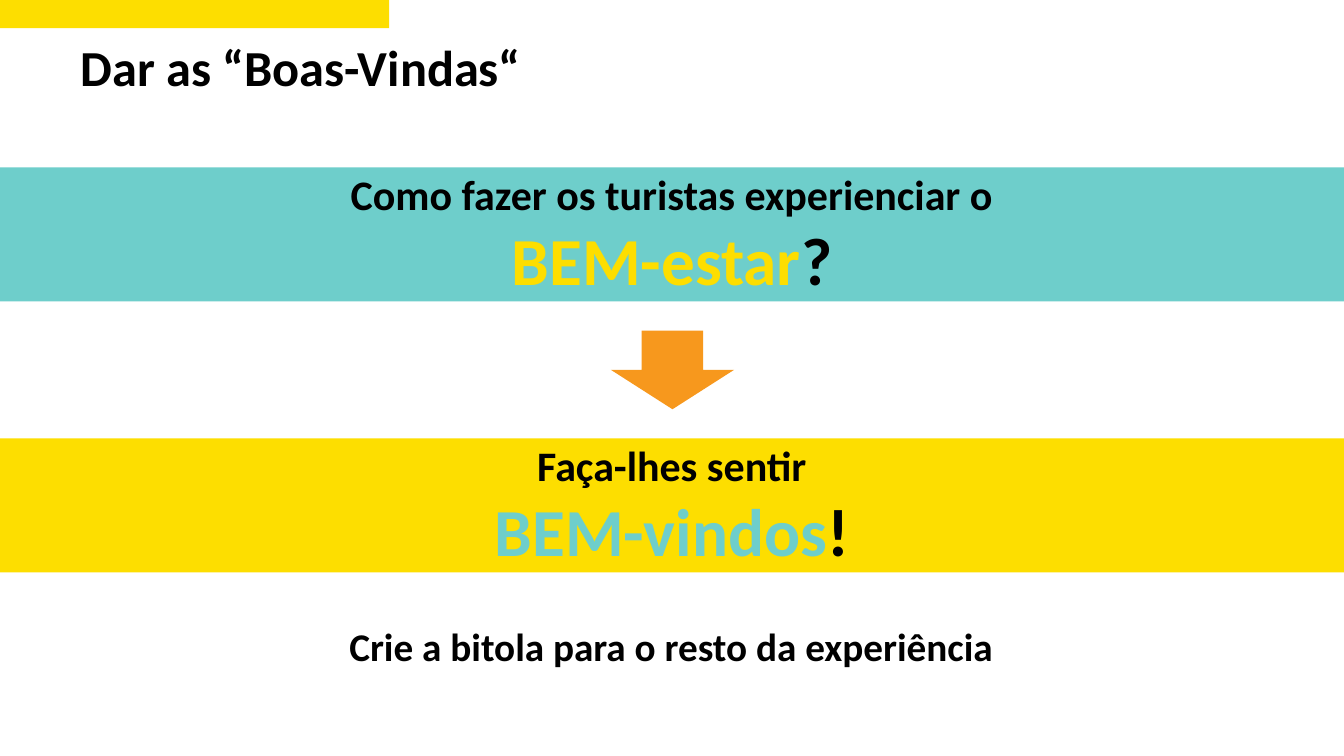
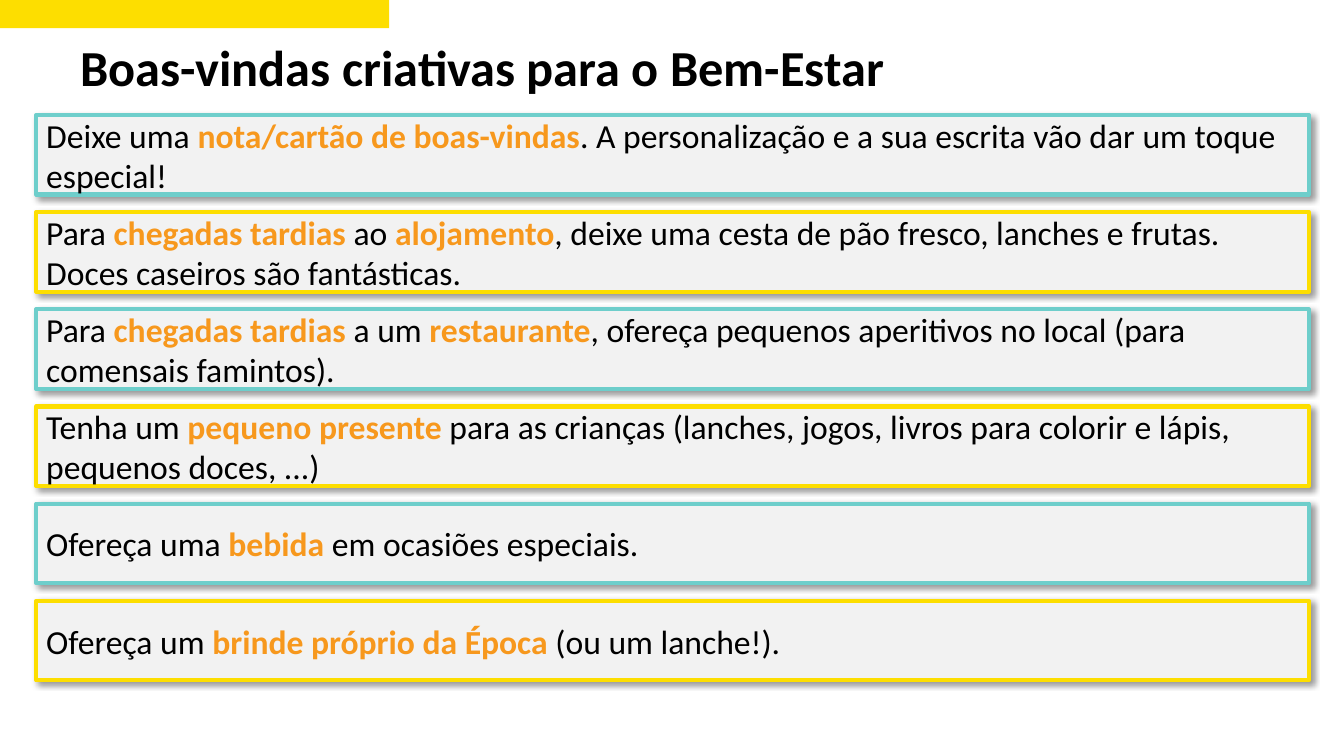
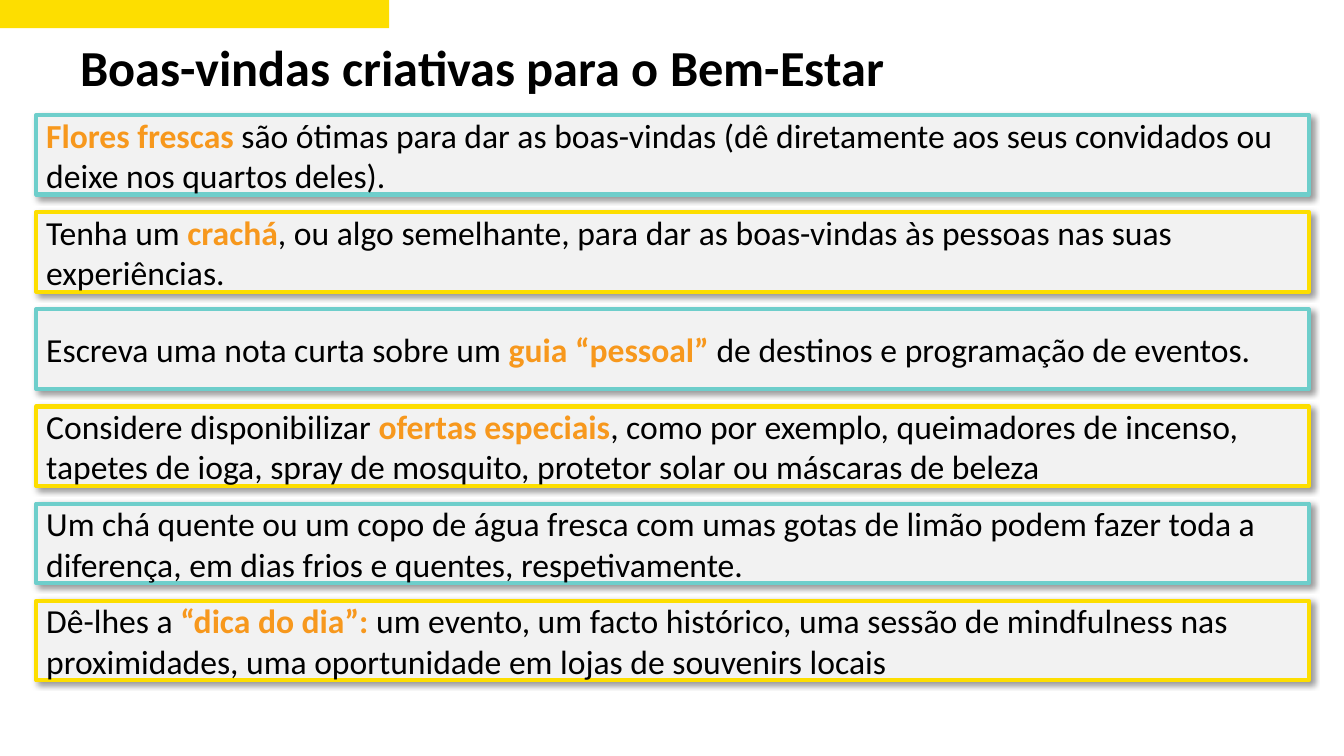
from lxml import etree
from pptx import Presentation
from pptx.dml.color import RGBColor
from pptx.enum.shapes import MSO_SHAPE
from pptx.enum.text import MSO_ANCHOR, PP_ALIGN
from pptx.oxml import parse_xml
from pptx.util import Inches, Pt

RECTANGLE, DOWN_ARROW = MSO_SHAPE.RECTANGLE, MSO_SHAPE.DOWN_ARROW
LEFT, CENTER = PP_ALIGN.LEFT, PP_ALIGN.CENTER
MIDDLE = MSO_ANCHOR.MIDDLE

COLORS = {"yellow": "FDDE00", "teal": "6ECECB", "orange": "F7981D",
          "panel": "F2F2F2", "text": "000000"}
FONT = "Calibri"
SLIDE_W, SLIDE_H = 13.33, 7.5
CARD_SHADOW = (
    '<a:effectLst xmlns:a="http://schemas.openxmlformats.org/drawingml/2006/main">'
    '<a:outerShdw blurRad="50800" dist="38100" dir="2700000" algn="tl" rotWithShape="0">'
    '<a:srgbClr val="000000"><a:alpha val="40000"/></a:srgbClr>'
    '</a:outerShdw></a:effectLst>')


def add_block(slide, kind, box, fill):
    """Add a filled shape without outline or shadow."""
    block = slide.shapes.add_shape(kind, *map(Inches, box))
    block.shadow.inherit = False
    block.fill.solid()
    block.fill.fore_color.rgb = RGBColor.from_string(COLORS[fill])
    block.line.fill.background()
    return block


def write(frame, lines, align=LEFT, bold=True, accent="orange"):
    """Write (text, size) lines; parts between asterisks are bold and accented."""
    frame.word_wrap = True
    for number, (text, size) in enumerate(lines):
        paragraph = frame.add_paragraph() if number else frame.paragraphs[0]
        paragraph.alignment = align
        for part_number, part in enumerate(text.split("*")):
            if not part:
                continue
            accented = part_number % 2 == 1
            run = paragraph.add_run()
            run.text = part
            font_format = {"name": FONT, "size": Pt(size), "bold": bold or accented}
            for attribute, value in font_format.items():
                setattr(run.font, attribute, value)
            color = COLORS[accent if accented else "text"]
            run.font.color.rgb = RGBColor.from_string(color)


prs = Presentation()
prs.slide_width, prs.slide_height = Inches(SLIDE_W), Inches(SLIDE_H)
blank = prs.slide_layouts[6]
for placeholder in list(blank.placeholders):
    placeholder._element.getparent().remove(placeholder._element)

# Titles with the width of their boxes
titles = [("Dar as “Boas-Vindas“", 7.49),
          ("Boas-vindas criativas para o Bem-Estar", 9.52),
          ("Boas-vindas criativas para o Bem-Estar", 8.82)]
slides = []
for title, title_width in titles:
    slide = prs.slides.add_slide(blank)
    title_box = slide.shapes.add_textbox(
        Inches(0.7), Inches(0.38), Inches(title_width), Inches(0.76))
    write(title_box.text_frame, [(title, 36)])
    title_box.text_frame.paragraphs[0].line_spacing = 0.9
    slides.append(slide)
welcome, *idea_slides = slides

# Corner band, moved to the layout that all slides share
corner_band = add_block(welcome, RECTANGLE, (0, 0, 3.86, 0.28), "yellow")
blank.shapes._spTree.append(corner_band._element)

# Slide 1: question, arrow, answer, conclusion
messages = [
    (1.66, "teal", "yellow", "Como fazer os turistas experienciar o", "*BEM-estar*?"),
    (4.35, "yellow", "teal", "Faça-lhes sentir", "*BEM-vindos*!"),
]
for top, fill, accent, lead, key_word in messages:
    add_block(welcome, RECTANGLE, (0, top, SLIDE_W, 1.33), fill)
    message = welcome.shapes.add_textbox(
        Inches(1.15), Inches(top - 0.04), Inches(11.03), Inches(1.41))
    write(message.text_frame, [(lead, 30), (key_word, 48)], CENTER, accent=accent)

add_block(welcome, DOWN_ARROW, (6.06, 3.28, 1.22, 0.78), "orange")
conclusion = welcome.shapes.add_textbox(
    Inches(1.96), Inches(6.12), Inches(9.39), Inches(0.57))
write(conclusion.text_frame, [("Crie a bitola para o resto da experiência", 28)], CENTER)

# Slides 2 and 3: cards with ideas, outlined in alternating colours
ideas = [
    ["Deixe uma *nota/cartão de boas-vindas*. A personalização e a sua escrita "
     "vão dar um toque especial!",
     "Para *chegadas tardias *ao *alojamento*, deixe uma cesta de pão fresco, "
     "lanches e frutas. Doces caseiros são fantásticas.",
     "Para *chegadas tardias *a um *restaurante*, ofereça pequenos aperitivos "
     "no local (para comensais famintos).",
     "Tenha um *pequeno presente *para as crianças (lanches, jogos, livros para "
     "colorir e lápis, pequenos doces, ...)",
     "Ofereça uma *bebida* em ocasiões especiais.",
     "Ofereça um *brinde próprio da Época *(ou um lanche!)."],
    ["*Flores frescas *são ótimas para dar as boas-vindas (dê diretamente aos "
     "seus convidados ou deixe nos quartos deles).",
     "Tenha um *crachá*, ou algo semelhante, para dar as boas-vindas às pessoas "
     "nas suas experiências.",
     "Escreva uma nota curta sobre um *guia “pessoal” *de destinos e programação "
     "de eventos.",
     "Considere disponibilizar *ofertas especiais*, como por exemplo, queimadores "
     "de incenso, tapetes de ioga, spray de mosquito, protetor solar ou máscaras "
     "de beleza",
     "Um chá quente ou um copo de água fresca com umas gotas de limão podem fazer "
     "toda a diferença, em dias frios e quentes, respetivamente.",
     "Dê-lhes a *“dica do dia”: *um evento, um facto histórico, uma sessão de "
     "mindfulness nas proximidades, uma oportunidade em lojas de souvenirs locais"],
]
first_top, last_top = 1.14, 5.96
for slide, slide_ideas in zip(idea_slides, ideas):
    step = (last_top - first_top) / (len(slide_ideas) - 1)
    for row, idea in enumerate(slide_ideas):
        card = add_block(slide, RECTANGLE,
                         (0.36, first_top + row * step, 12.62, 0.79), "panel")
        card.line.color.rgb = RGBColor.from_string(COLORS[("teal", "yellow")[row % 2]])
        card.line.width = Pt(3)
        properties = card._element.spPr
        for effects in properties.findall("{*}effectLst"):
            properties.replace(effects, parse_xml(CARD_SHADOW))
        card.text_frame.vertical_anchor = MIDDLE
        write(card.text_frame, [(idea, 24)], bold=False)

prs.save("out.pptx")
